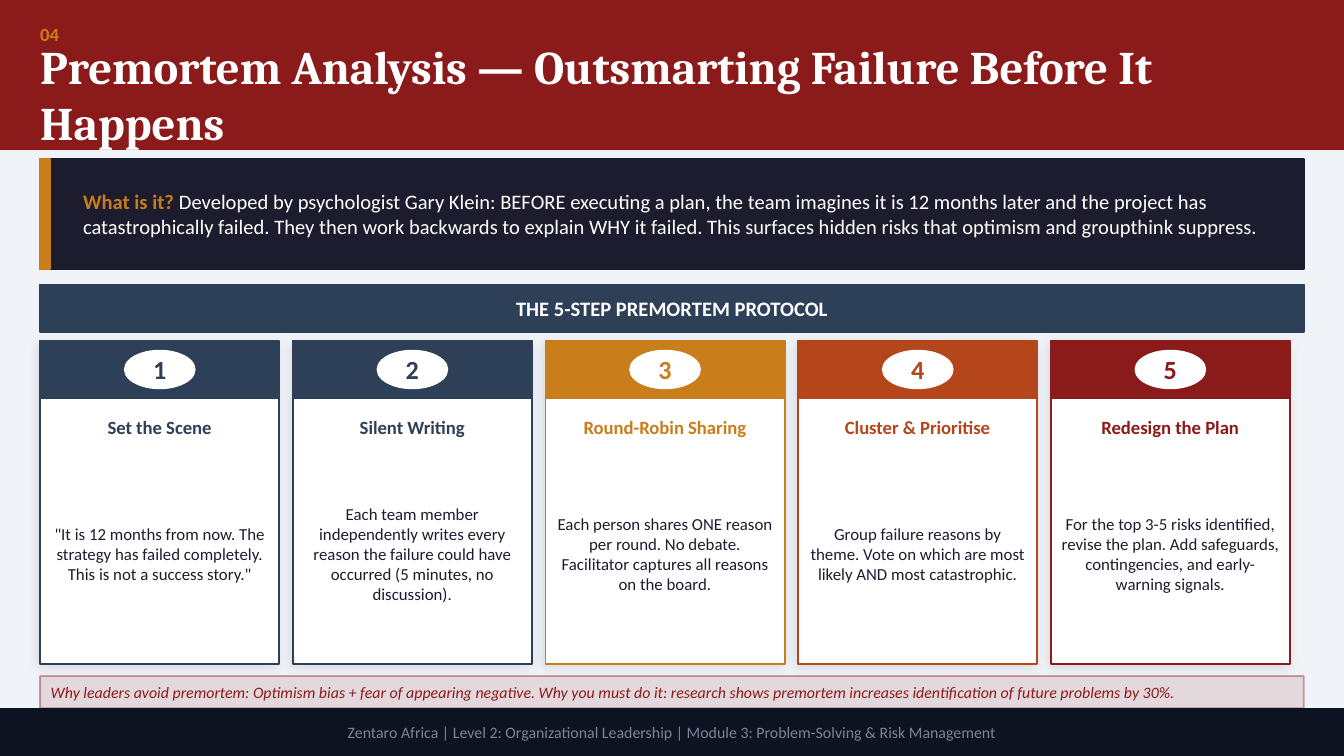
from lxml import etree
from pptx import Presentation
from pptx.dml.color import RGBColor
from pptx.enum.shapes import MSO_SHAPE as SHAPE
from pptx.enum.text import MSO_ANCHOR as ANCHOR, MSO_AUTO_SIZE as AUTO, PP_ALIGN as ALIGN
from pptx.oxml import parse_xml
from pptx.oxml.ns import qn
from pptx.util import Cm, Pt

rgb = RGBColor.from_string
RED, GOLD, NAVY, RUST = "8B1A1A", "C97D1B", "2E4057", "B5451B"
INK, WHITE = "1C1C2E", "FFFFFF"
LEFT, WIDTH = 0.76, 23.88

prs = Presentation()
prs.slide_width, prs.slide_height = Cm(25.4), Cm(14.29)
s = prs.slides.add_slide(prs.slide_layouts[5])
s.background.fill.solid()
s.background.fill.fore_color.rgb = rgb("F0F4F8")


def box(x, y, w, h, fill, line=None, kind=SHAPE.RECTANGLE):
    sp = s.shapes.add_shape(kind, Cm(x), Cm(y), Cm(w), Cm(h))
    sp.shadow.inherit = False
    sp.fill.solid()
    sp.fill.fore_color.rgb = rgb(fill)
    sp.line.color.rgb = rgb(line or fill)
    sp.line.width = Pt(1)
    return sp


def write(sp, runs, size, align=ALIGN.CENTER, font="Calibri", inset=(0, 0)):
    tf = sp.text_frame
    tf.word_wrap = True
    tf.auto_size = AUTO.NONE
    tf.vertical_anchor = ANCHOR.MIDDLE
    tf.margin_left = tf.margin_right = Cm(inset[0])
    tf.margin_top = tf.margin_bottom = Cm(inset[1])
    p = tf.paragraphs[0]
    p.alignment = align
    for text, color, bold, italic in runs:
        r = p.add_run()
        r.text = text
        r.font.name, r.font.size = font, Pt(size)
        r.font.bold, r.font.italic = bold, italic
        r.font.color.rgb = rgb(color)


box(0, 0, 25.4, 2.67, RED)
box(0, 2.67, 25.4, 0.15, RED)
sp = s.shapes.add_textbox(Cm(LEFT), Cm(0.2), Cm(1.4), Cm(0.89))
write(sp, [("04", GOLD, True, False)], 10, ALIGN.LEFT)

title = s.shapes.title
title.left, title.top, title.width, title.height = Cm(LEFT), Cm(1.07), Cm(WIDTH), Cm(1.4)
write(title, [("Premortem Analysis — Outsmarting Failure Before It Happens", WHITE, True, False)],
      25, ALIGN.LEFT, "Cambria")
s.shapes._spTree.append(title._element)

box(LEFT, 3, WIDTH, 2.08, INK)
box(LEFT, 3, 0.18, 2.08, GOLD)
sp = s.shapes.add_textbox(Cm(1.32), Cm(3.15), Cm(22.86), Cm(1.78))
write(sp, [
    ("What is it? ", GOLD, True, False),
    ("Developed by psychologist Gary Klein: BEFORE executing a plan, the team imagines it is "
     "12 months later and the project has catastrophically failed. They then work backwards to "
     "explain WHY it failed. This surfaces hidden risks that optimism and groupthink suppress.",
     WHITE, False, False),
], 11, ALIGN.LEFT, inset=(0.25, 0.13))

sp = box(LEFT, 5.38, WIDTH, 0.89, NAVY)
write(sp, [("THE 5-STEP PREMORTEM PROTOCOL", WHITE, True, False)], 11)

steps = [
    (NAVY, "Set the Scene",
     '"It is 12 months from now. The strategy has failed completely. This is not a success story."'),
    (NAVY, "Silent Writing",
     "Each team member independently writes every reason the failure could have occurred "
     "(5 minutes, no discussion)."),
    (GOLD, "Round-Robin Sharing",
     "Each person shares ONE reason per round. No debate. Facilitator captures all reasons "
     "on the board."),
    (RUST, "Cluster & Prioritise",
     "Group failure reasons by theme. Vote on which are most likely AND most catastrophic."),
    (RED, "Redesign the Plan",
     "For the top 3-5 risks identified, revise the plan. Add safeguards, contingencies, and "
     "early-warning signals."),
]
SHADOW = (
    '<a:outerShdw xmlns:a="http://schemas.openxmlformats.org/drawingml/2006/main" '
    'blurRad="76200" dist="25400" dir="8100000" algn="bl" rotWithShape="0">'
    '<a:srgbClr val="000000"><a:alpha val="10000"/></a:srgbClr></a:outerShdw>'
)
for i, (color, name, detail) in enumerate(steps):
    x = LEFT + 4.775 * i
    card = box(x, 6.45, 4.52, 6.1, WHITE, color)
    card._element.spPr.find(qn("a:effectLst")).append(parse_xml(SHADOW))
    box(x, 6.45, 4.52, 1.07, color)
    badge = box(x + 1.6, 6.63, 1.32, 0.71, WHITE, kind=SHAPE.OVAL)
    write(badge, [(str(i + 1), color, True, False)], 14)
    sp = s.shapes.add_textbox(Cm(x + 0.2), Cm(7.67), Cm(4.11), Cm(0.81))
    write(sp, [(name, color, True, False)], 10)
    sp = s.shapes.add_textbox(Cm(x + 0.2), Cm(8.59), Cm(4.11), Cm(3.76))
    write(sp, [(detail, INK, False, False)], 9)

note = box(LEFT, 12.78, WIDTH, 0.61, RED)
fills = note._element.spPr.iter(qn("a:srgbClr"))
for clr, alpha in zip(list(fills), ("12000", "40000")):
    etree.SubElement(clr, qn("a:alpha")).set("val", alpha)
write(note, [("Why leaders avoid premortem: Optimism bias + fear of appearing negative. Why you must "
              "do it: research shows premortem increases identification of future problems by 30%.",
              RED, False, True)], 8.5, ALIGN.LEFT, inset=(0.2, 0))

footer = box(0, 13.41, 25.4, 0.86, "0D1321")
write(footer, [("Zentaro Africa | Level 2: Organizational Leadership | "
                "Module 3: Problem-Solving & Risk Management", "7A8599", False, False)], 8.5)

prs.save("out.pptx")
